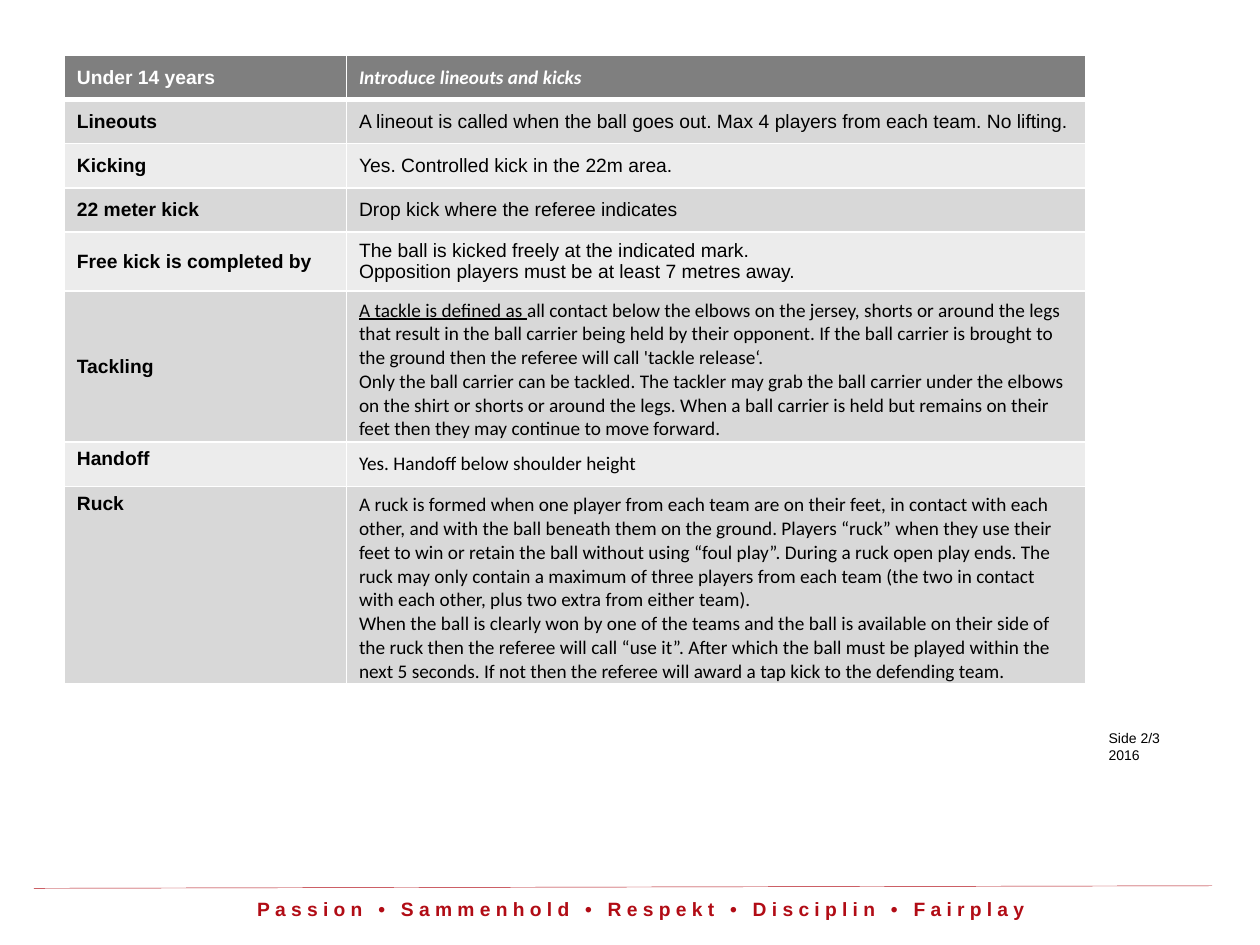
from lxml import etree
from pptx import Presentation
from pptx.dml.color import RGBColor
from pptx.enum import shapes, text
from pptx.oxml.ns import qn
from pptx.util import Inches, Pt

WHITE = RGBColor(0xFF, 0xFF, 0xFF)
BLACK = RGBColor(0, 0, 0)
RED = RGBColor(0xB1, 0x0C, 0x15)
HEADER_GREY = RGBColor(0x7F, 0x7F, 0x7F)
BANDS = (RGBColor(0xEC, 0xEC, 0xEC), RGBColor(0xD8, 0xD8, 0xD8))

# Label, paragraphs, font of the paragraphs, row height
RULES = [
    ("Under 14 years", ["Introduce lineouts and kicks"], "Calibri", 0.35),
    ("Lineouts", ["A lineout is called when the ball goes out. Max 4 players from each team. "
                  "No lifting."], "Arial", 0.35),
    ("Kicking", ["Yes. Controlled kick in the 22m area."], "Arial", 0.35),
    ("22 meter kick", ["Drop kick where the referee indicates"], "Arial", 0.35),
    ("Free kick is completed by", [
        "The ball is kicked freely at the indicated mark.",
        "Opposition players must be at least 7 metres away."], "Arial", 0.47),
    ("Tackling", [
        "A tackle is defined as all contact below the elbows on the jersey, shorts or around "
        "the legs that result in the ball carrier being held by their opponent. If the ball "
        "carrier is brought to the ground then the referee will call 'tackle release‘.",
        "Only the ball carrier can be tackled. The tackler may grab the ball carrier under the "
        "elbows on the shirt or shorts or around the legs. When a ball carrier is held but "
        "remains on their feet then they may continue to move forward."], "Calibri", 1.2),
    ("Handoff", ["Yes. Handoff below shoulder height"], "Calibri", 0.35),
    ("Ruck", [
        "A ruck is formed when one player from each team are on their feet, in contact with "
        "each other, and with the ball beneath them on the ground. Players “ruck” when they "
        "use their feet to win or retain the ball without using “foul play”. During a ruck "
        "open play ends. The ruck may only contain a maximum of three players from each team "
        "(the two in contact with each other, plus two extra from either team).",
        "When the ball is clearly won by one of the teams and the ball is available on their "
        "side of the ruck then the referee will call “use it”. After which the ball must be "
        "played within the next 5 seconds. If not then the referee will award a tap kick to "
        "the defending team."], "Calibri", 1.57),
]
UNDERLINED = "A tackle is defined as "
TOP_LABELS = ("Handoff", "Ruck")
COLUMNS = (2.24, 5.87)
VALUES = ["Passion • Sammenhold • Respekt • Disciplin • Fairplay"]
PAGE_NOTE = ["Side 2/3", "2016"]


def write(frame, lines, color, **font):
    """Fill a text frame with paragraphs, underlining the defined term."""
    for index, line in enumerate(lines):
        para = frame.paragraphs[0] if index == 0 else frame.add_paragraph()
        term = UNDERLINED if line.startswith(UNDERLINED) else ""
        for part in filter(None, (term, line[len(term):])):
            span = para.add_run()
            span.text = part
            span.font.color.rgb = color
            for name, value in font.items():
                setattr(span.font, name, value)
            if part == UNDERLINED:
                span.font.underline = True


def add_borders(cell, bottom):
    properties = cell._tc.get_or_add_tcPr()
    for index, (side, width) in enumerate((("L", 1), ("R", 1), ("T", 1), ("B", bottom))):
        line = etree.Element(qn("a:ln" + side), w=str(Pt(width)))
        fill = etree.SubElement(line, qn("a:solidFill"))
        etree.SubElement(fill, qn("a:srgbClr"), val=str(WHITE))
        properties.insert(index, line)


def add_rules(page):
    table = page.shapes.add_table(
        len(RULES), len(COLUMNS), Inches(0.51), Inches(0.44),
        Inches(sum(COLUMNS)), Inches(sum(rule[3] for rule in RULES))).table
    for column, width in zip(table.columns, COLUMNS):
        column.width = Inches(width)
    for index, (label, lines, face, height) in enumerate(RULES):
        header = index == 0
        table.rows[index].height = Inches(height)
        color = WHITE if header else BLACK
        name_cell, rule_cell = table.rows[index].cells
        for cell in (name_cell, rule_cell):
            cell.vertical_anchor = text.MSO_ANCHOR.MIDDLE
            cell.fill.solid()
            cell.fill.fore_color.rgb = HEADER_GREY if header else BANDS[index % 2]
            add_borders(cell, 3 if header or cell is None else 1)
        if label in TOP_LABELS:
            name_cell.vertical_anchor = text.MSO_ANCHOR.TOP
        if height > 1:
            rule_cell.margin_bottom = 0
        write(name_cell.text_frame, [label], color, name="Arial", size=Pt(11), bold=True)
        write(rule_cell.text_frame, lines, color, name=face, size=Pt(11),
              bold=header, italic=header)
    for cell in table.rows[1].cells:
        cell._tc.tcPr.find(qn("a:lnT")).set("w", str(Pt(3)))


def add_text(page, place, lines, color, **font):
    box = page.shapes.add_textbox(*map(Inches, place))
    box.text_frame.word_wrap = True
    write(box.text_frame, lines, color, name="Arial", **font)
    return box.text_frame.paragraphs[0]


def add_footer(page):
    para = add_text(page, (1.68, 7.07, 6.82, 0.47), VALUES, RED, size=Pt(11), bold=True)
    para.alignment = text.PP_ALIGN.CENTER
    para.runs[0].font._element.set("spc", "300")
    rule = page.shapes.add_connector(
        shapes.MSO_CONNECTOR.STRAIGHT, *map(Inches, (0.27, 7.05, 9.62, 7.03)))
    rule.line.color.rgb = RED
    rule.line.width = Pt(0.25)
    etree.SubElement(rule._element.spPr, qn("a:effectLst"))


def main():
    deck = Presentation()
    deck.slide_width, deck.slide_height = Inches(10), Inches(7.5)
    page = deck.slides.add_slide(deck.slide_layouts[6])
    add_footer(page)
    add_rules(page)
    add_text(page, (8.7, 5.74, 1.14, 0.37), PAGE_NOTE, BLACK, size=Pt(8))
    deck.save("out.pptx")


if __name__ == "__main__":
    main()
